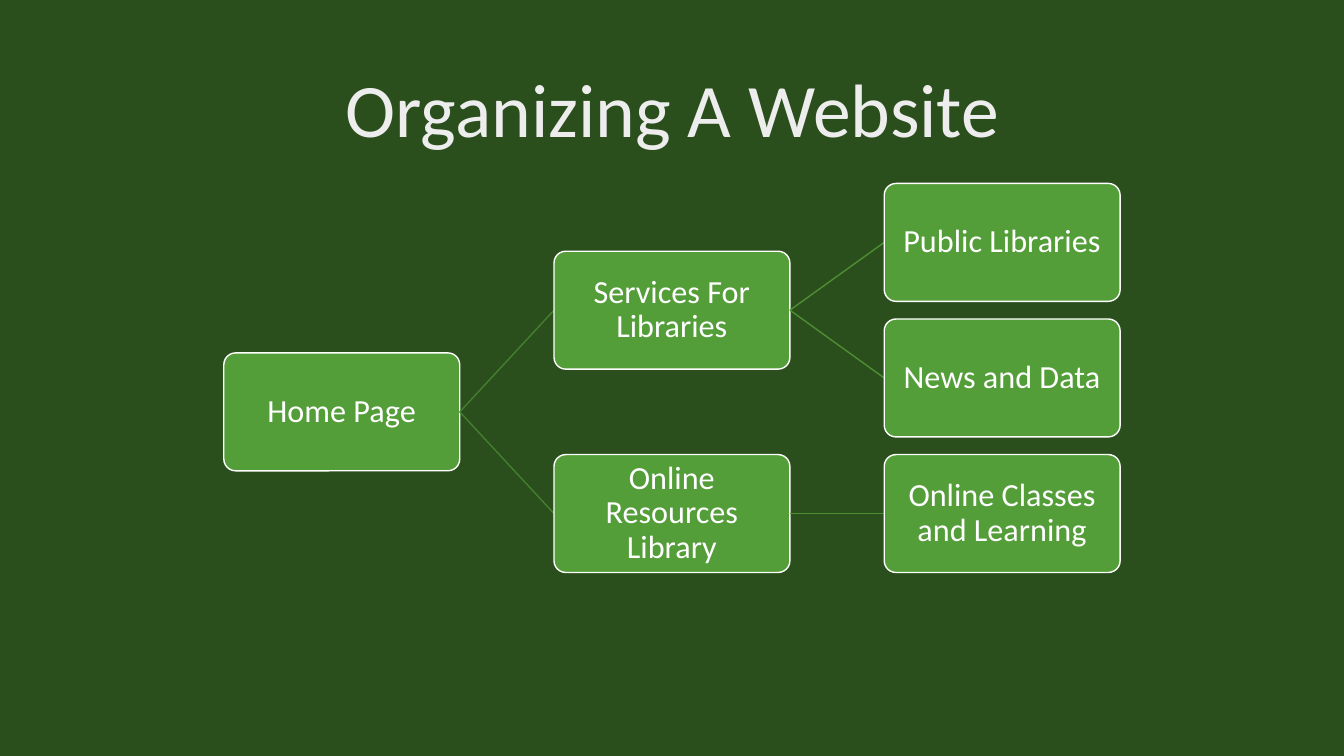
from dataclasses import dataclass

from lxml import etree
from pptx import Presentation
from pptx.dml.color import RGBColor
from pptx.enum.shapes import MSO_CONNECTOR, MSO_SHAPE
from pptx.enum.text import MSO_ANCHOR, PP_ALIGN
from pptx.oxml.ns import qn
from pptx.slide import Slide
from pptx.text.text import _Paragraph
from pptx.util import Inches, Pt

STRAIGHT = MSO_CONNECTOR.STRAIGHT
ROUNDED = MSO_SHAPE.ROUNDED_RECTANGLE
MIDDLE = MSO_ANCHOR.MIDDLE
CENTER = PP_ALIGN.CENTER

COLORS = {
    "background": "2A4F1C",
    "title": "EDEDED",
    "page": "549E39",
    "page_text": "FFFFFF",
    "border": "FFFFFF",
}
BRANCH_COLORS = ["437F2E", "4C8F34"]
FONT = "Calibri"
PAGE_WIDTH, PAGE_HEIGHT = 2.34, 1.17
LEFT, TOP = 2.22, 1.82
LEVEL_STEP, ROW_STEP = 3.275, 1.345
INSET = Inches(0.02)


@dataclass(frozen=True)
class Page:
    label: str
    level: int
    row: float = 0
    children: tuple["Page", ...] = ()

    @property
    def position(self) -> float:
        if not self.children:
            return self.row
        return (self.children[0].position + self.children[-1].position) / 2

    @property
    def left(self) -> float:
        return LEFT + self.level * LEVEL_STEP

    @property
    def top(self) -> float:
        return TOP + self.position * ROW_STEP

    @property
    def middle(self) -> float:
        return self.top + PAGE_HEIGHT / 2


HOME = Page("Home Page", 0, children=(
    Page("Services For Libraries", 1, children=(
        Page("Public Libraries", 2, 0),
        Page("News and Data", 2, 1),
    )),
    Page("Online Resources Library", 1, children=(
        Page("Online Classes and Learning", 2, 2),
    )),
))


def color(hex_value: str) -> RGBColor:
    return RGBColor.from_string(hex_value)


def format_paragraph(paragraph: _Paragraph, size: int, hex_value: str) -> None:
    paragraph.alignment = CENTER
    paragraph.line_spacing = 0.9
    paragraph.font.name = FONT
    paragraph.font.size = Pt(size)
    paragraph.font.color.rgb = color(hex_value)


def draw_title(slide: Slide) -> None:
    title = slide.shapes.title
    title.left, title.top = Inches(0.92), Inches(0.4)
    title.width, title.height = Inches(11.5), Inches(1.45)
    title.text_frame.text = "Organizing A Website"
    title.text_frame.vertical_anchor = MIDDLE
    format_paragraph(title.text_frame.paragraphs[0], 54, COLORS["title"])


def draw_branch(slide: Slide, parent: Page, child: Page) -> None:
    branch = slide.shapes.add_connector(
        STRAIGHT, Inches(parent.left + PAGE_WIDTH), Inches(parent.middle),
        Inches(child.left), Inches(child.middle))
    branch.line.color.rgb = color(BRANCH_COLORS[parent.level])
    branch.line.width = Pt(1)
    etree.SubElement(branch.element.spPr, qn("a:effectLst"))


def draw_page(slide: Slide, page: Page) -> None:
    box = slide.shapes.add_shape(
        ROUNDED, Inches(page.left), Inches(page.top),
        Inches(PAGE_WIDTH), Inches(PAGE_HEIGHT))
    box.adjustments[0] = 0.1
    box.shadow.inherit = False
    box.fill.solid()
    box.fill.fore_color.rgb = color(COLORS["page"])
    box.line.color.rgb = color(COLORS["border"])
    box.line.width = Pt(1)
    frame = box.text_frame
    frame.word_wrap = True
    frame.vertical_anchor = MIDDLE
    frame.margin_left = frame.margin_right = INSET
    frame.margin_top = frame.margin_bottom = INSET
    frame.text = page.label
    format_paragraph(frame.paragraphs[0], 23, COLORS["page_text"])


def draw_tree(slide: Slide, page: Page) -> None:
    draw_page(slide, page)
    for child in page.children:
        draw_branch(slide, page, child)
        draw_tree(slide, child)


def main() -> None:
    presentation = Presentation()
    presentation.slide_width = Inches(13.33)
    presentation.slide_height = Inches(7.5)
    slide = presentation.slides.add_slide(presentation.slide_layouts[5])
    slide.background.fill.solid()
    slide.background.fill.fore_color.rgb = color(COLORS["background"])
    draw_title(slide)
    draw_tree(slide, HOME)
    presentation.save("out.pptx")


if __name__ == "__main__":
    main()
